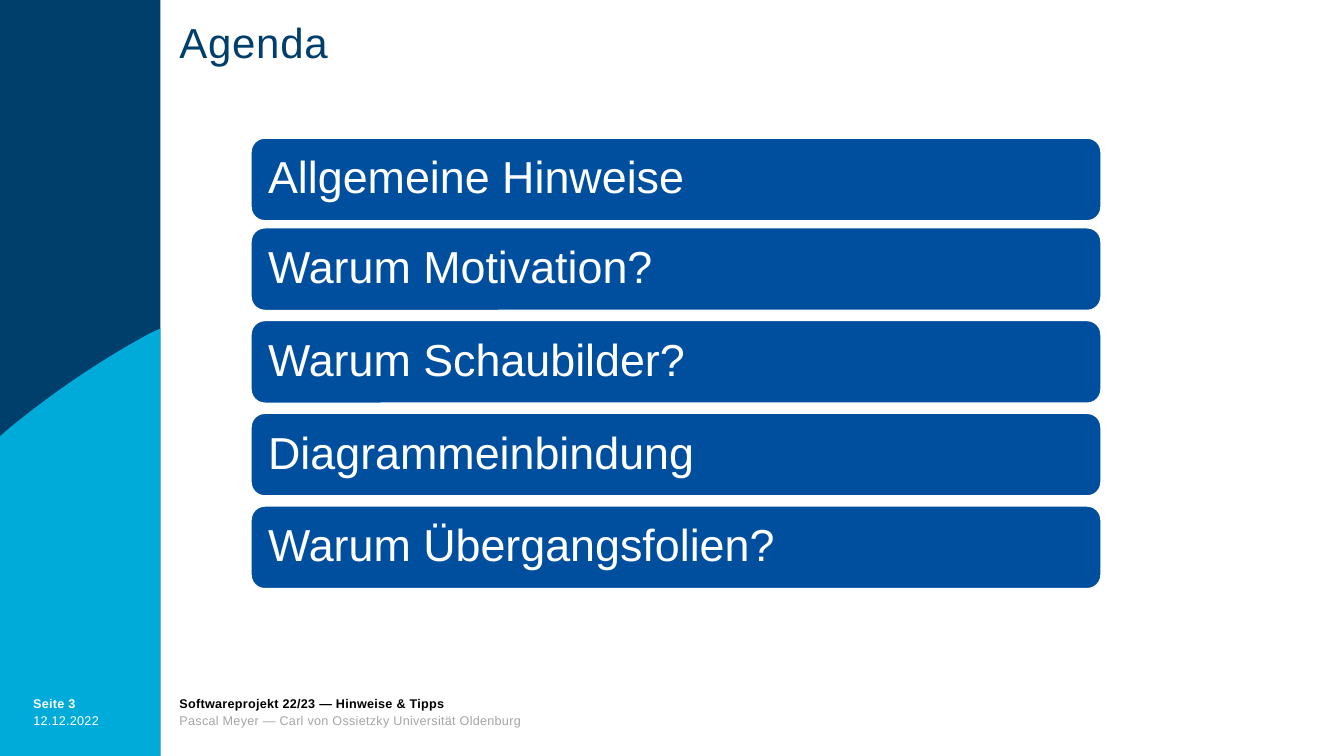
from dataclasses import dataclass
from typing import Optional, Union

import pptx
import pptx.dml.color
import pptx.enum.shapes
import pptx.enum.text
import pptx.shapes.autoshape
import pptx.slide
import pptx.text.text
import pptx.util

Inches = pptx.util.Inches
Pt = pptx.util.Pt
RGBColor = pptx.dml.color.RGBColor

NAVY = RGBColor(0x00, 0x3F, 0x6B)
CYAN = RGBColor(0x00, 0xAB, 0xDA)
BLUE = RGBColor(0x00, 0x4F, 0x9F)
WHITE = RGBColor(0xFF, 0xFF, 0xFF)
BLACK = RGBColor(0x00, 0x00, 0x00)
GREY = RGBColor(0xA5, 0xA5, 0xA5)

BAND = 1.59
STEPS = 24


@dataclass
class Line:
    text: str
    color: RGBColor
    bold: bool = False


@dataclass
class Label:
    left: float
    top: float
    width: float
    height: float
    lines: list[Line]
    size: float = 9
    track: float = 0.2
    lead: Union[float, pptx.util.Length] = Pt(12)


@dataclass
class Topic:
    top: float
    text: str


LABELS = [
    Label(0.33, 6.89, 1.14, 0.17, [Line("Seite 3", WHITE, True)]),
    Label(1.78, 6.89, 9.41, 0.4, [
        Line("Softwareprojekt 22/23 — Hinweise & Tipps", BLACK, True),
        Line("Pascal Meyer — Carl von Ossietzky Universität Oldenburg", GREY),
    ]),
    Label(0.33, 7.06, 0.98, 0.23, [Line("12.12.2022", WHITE)]),
    Label(1.78, 0.22, 6.38, 0.48, [Line("Agenda", NAVY)], 30, 0.5, 0.9),
]

TOPICS = [
    Topic(1.37, "Allgemeine Hinweise"),
    Topic(2.26, "Warum Motivation?"),
    Topic(3.18, "Warum Schaubilder?"),
    Topic(4.1, "Diagrammeinbindung"),
    Topic(5.02, "Warum Übergangsfolien?"),
]


def write(frame: pptx.text.text.TextFrame, text: str, *, size: float,
          color: RGBColor, bold: bool = False, track: float = 0,
          lead: Union[float, pptx.util.Length] = 0.9) -> None:
    para = frame.paragraphs[0]
    para.alignment = pptx.enum.text.PP_ALIGN.LEFT
    para.line_spacing = lead
    if para.runs:
        para.add_line_break()
    run = para.add_run()
    run.text = text
    run.font.name = "Arial"
    run.font.size = Pt(size)
    run.font.bold = bold
    run.font.color.rgb = color
    if track:
        run._r.get_or_add_rPr().set("spc", str(round(track * 100)))


def pad(frame: pptx.text.text.TextFrame, inset: float) -> None:
    frame.word_wrap = True
    frame.margin_left = frame.margin_right = Inches(inset)
    frame.margin_top = frame.margin_bottom = Inches(inset)


def paint(shape: pptx.shapes.autoshape.Shape, fill: RGBColor,
          edge: Optional[RGBColor] = None) -> None:
    shape.shadow.inherit = False
    shape.fill.solid()
    shape.fill.fore_color.rgb = fill
    if edge is None:
        shape.line.fill.background()
    else:
        shape.line.color.rgb = edge
        shape.line.width = Pt(1)


def curve(ends: list[tuple[float, float]]) -> list[tuple[float, float]]:
    dots = []
    for step in range(STEPS + 1):
        t = step / STEPS
        parts = ((1 - t) ** 3, 3 * t * (1 - t) ** 2, 3 * t * t * (1 - t), t ** 3)
        dots.append((sum(p * x for p, (x, _) in zip(parts, ends)),
                     sum(p * y for p, (_, y) in zip(parts, ends))))
    return dots


def draw_band(slide: pptx.slide.Slide) -> None:
    band = slide.shapes.add_shape(pptx.enum.shapes.MSO_SHAPE.RECTANGLE, 0, 0,
                                  Inches(BAND), Inches(7.5))
    paint(band, NAVY)
    arc = curve([(0.09, 4.25), (0.53, 3.89), (1, 3.57), (1.5, 3.3)])
    dots = [(BAND, 7.5), (0, 7.5), (0, 4.33), *arc]
    pen = slide.shapes.build_freeform(Inches(BAND), Inches(3.26))
    pen.add_line_segments([(Inches(x), Inches(y)) for x, y in dots])
    paint(pen.convert_to_shape(), CYAN)


def draw_label(slide: pptx.slide.Slide, label: Label) -> None:
    box = slide.shapes.add_textbox(Inches(label.left), Inches(label.top),
                                   Inches(label.width), Inches(label.height))
    pad(box.text_frame, 0)
    for line in label.lines:
        write(box.text_frame, line.text, size=label.size, color=line.color,
              bold=line.bold, track=label.track, lead=label.lead)


def draw_topic(slide: pptx.slide.Slide, topic: Topic) -> None:
    bar = slide.shapes.add_shape(pptx.enum.shapes.MSO_SHAPE.ROUNDED_RECTANGLE,
                                 Inches(2.49), Inches(topic.top),
                                 Inches(8.43), Inches(0.82))
    paint(bar, BLUE, WHITE)
    pad(bar.text_frame, 0.13)
    bar.text_frame.vertical_anchor = pptx.enum.text.MSO_ANCHOR.MIDDLE
    write(bar.text_frame, topic.text, size=32, color=WHITE)


def main() -> None:
    deck = pptx.Presentation()
    deck.slide_width = Inches(13.33)
    deck.slide_height = Inches(7.5)
    slide = deck.slides.add_slide(deck.slide_layouts[6])
    draw_band(slide)
    for label in LABELS:
        draw_label(slide, label)
    for topic in TOPICS:
        draw_topic(slide, topic)
    deck.save("out.pptx")


if __name__ == "__main__":
    main()
